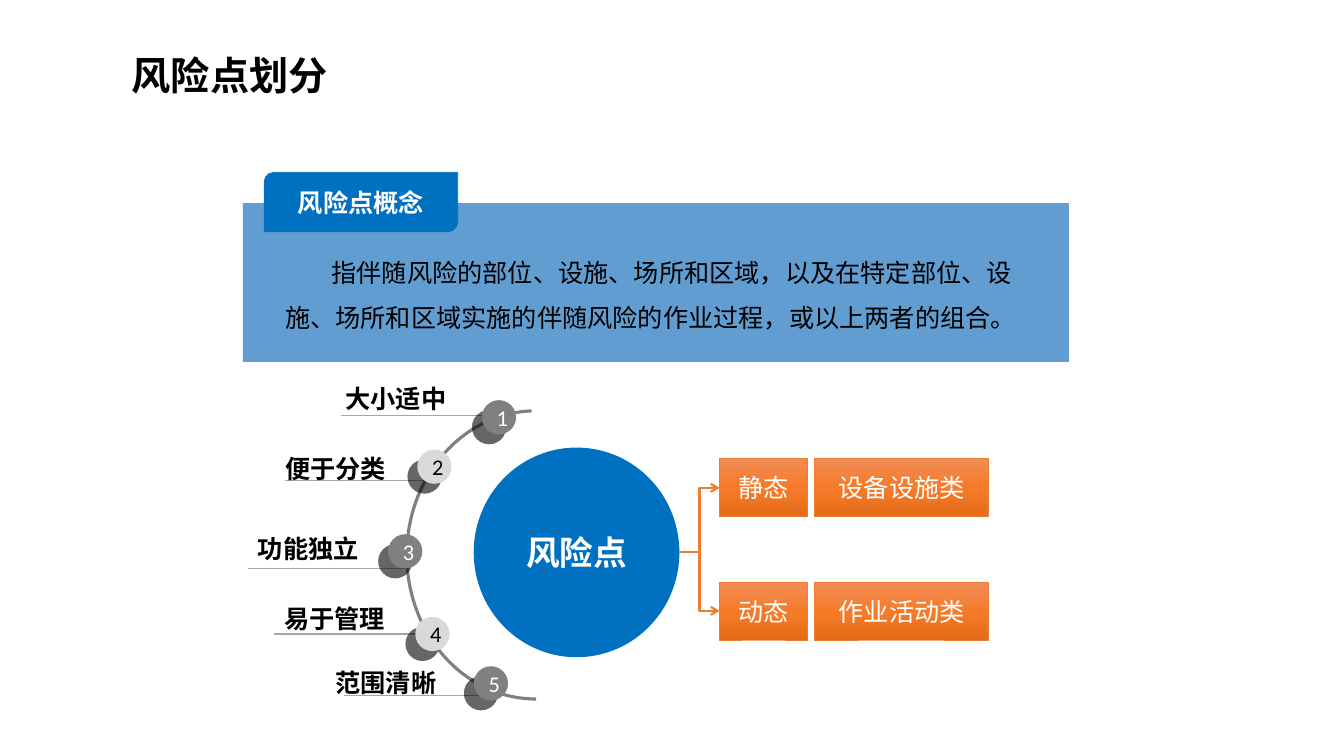
from copy import deepcopy
from dataclasses import dataclass
from typing import Optional

from lxml.etree import SubElement
from pptx import Presentation
from pptx.dml.color import RGBColor
from pptx.enum.shapes import MSO_CONNECTOR, MSO_SHAPE
from pptx.enum.text import MSO_ANCHOR, MSO_AUTO_SIZE, PP_ALIGN
from pptx.oxml.ns import qn
from pptx.util import Emu, Inches, Pt

CELL = Inches(0.1)
COLS, ROWS = 133.33, 75
CJK = "Noto Sans CJK SC"
COLOURS = {
    "black": "000000",
    "white": "FFFFFF",
    "blue": "0070C0",
    "sky": "629DD1",
    "grey": "808080",
    "light": "D9D9D9",
    "rule": "9DA8B1",
    "orange": "ED7D31",
}
ORANGE_STOPS = ((0, "F18C57"), (0.5, "F67B28"), (1, "E56C19"))


@dataclass(frozen=True)
class Box:
    col: float
    row: float
    cols: float
    rows: float

    def emu(self) -> tuple[Emu, ...]:
        return tuple(cells(n) for n in (self.col, self.row, self.cols, self.rows))


@dataclass(frozen=True)
class Text:
    words: str
    size: int
    colour: str
    bold: bool = False
    font: str = "Calibri"


@dataclass(frozen=True)
class Criterion:
    label: str
    label_at: tuple[float, float]
    rule_at: tuple[float, float]
    rule_cols: float
    dot_at: tuple[float, float]
    font: str = "Calibri"


@dataclass(frozen=True)
class Branch:
    state: str
    category: str
    row: float
    arrow_row: float


CRITERIA = (
    Criterion("大小适中", (33.3, 37.5), (33.8, 41.2), 15.7, (47.8, 39.7), "Arial"),
    Criterion("便于分类", (27.3, 44.5), (28.3, 47.7), 14.6, (41.4, 44.6)),
    Criterion("功能独立", (24.6, 52.4), (24.6, 56.4), 15.7, (38.5, 53)),
    Criterion("易于管理", (27.2, 59.4), (27.2, 62.9), 15.7, (41.2, 61.2)),
    Criterion("范围清晰", (32.3, 65.7), (34.1, 69), 15.7, (47, 66.1)),
)
BRANCHES = (
    Branch("静态", "设备设施类", 45.5, 48.4),
    Branch("动态", "作业活动类", 57.8, 60.6),
)


def cells(n: float) -> Emu:
    return Emu(round(n * CELL))


def rgb(name: str) -> RGBColor:
    return RGBColor.from_string(COLOURS[name])


def add_run(p, text: Text) -> None:
    r = p.add_run()
    r.text = text.words
    r.font.size = Pt(text.size)
    r.font.bold = text.bold
    r.font.name = text.font
    r.font.color.rgb = rgb(text.colour)
    SubElement(r.font._element, qn("a:ea"), typeface=CJK)


def add_shape(s, kind: MSO_SHAPE, box: Box, fill: str,
              line: Optional[str] = None, text: Optional[Text] = None):
    sp = s.shapes.add_shape(kind, *box.emu())
    sp.shadow.inherit = False
    sp.fill.solid()
    sp.fill.fore_color.rgb = rgb(fill)
    if line:
        sp.line.color.rgb = rgb(line)
        sp.line.width = Pt(0.5)
    else:
        sp.line.fill.background()
    if text:
        tf = sp.text_frame
        tf.vertical_anchor = MSO_ANCHOR.MIDDLE
        p = tf.paragraphs[0]
        p.alignment = PP_ALIGN.CENTER
        add_run(p, text)
    return sp


def add_text(s, box: Box, text: Text, wrap: bool = False):
    tf = s.shapes.add_textbox(*box.emu()).text_frame
    tf.word_wrap = wrap
    tf.auto_size = MSO_AUTO_SIZE.SHAPE_TO_FIT_TEXT
    p = tf.paragraphs[0]
    add_run(p, text)
    return p


def add_line(s, kind: MSO_CONNECTOR, start: tuple[float, float],
             end: tuple[float, float], colour: str, width: float):
    cx = s.shapes.add_connector(kind, *(cells(n) for n in start + end))
    cx.line.color.rgb = rgb(colour)
    cx.line.width = Pt(width)
    SubElement(cx._element.spPr, qn("a:effectLst"))
    return cx


def add_dot(s, at: tuple[float, float], number: int) -> None:
    fill, ink = ("grey", "white") if number % 2 else ("light", "black")
    sp = add_shape(s, MSO_SHAPE.OVAL, Box(*at, 3.4, 3.4), fill,
                   text=Text(str(number), 16, ink))
    effects = sp._element.spPr.find(qn("a:effectLst"))
    shadow = SubElement(effects, qn("a:outerShdw"), blurRad="0",
                        dist=str(Pt(10)), dir=str(135 * 60000), rotWithShape="0")
    colour = SubElement(shadow, qn("a:srgbClr"), val=COLOURS["black"])
    SubElement(colour, qn("a:alpha"), val="60000")


def add_tile(s, box: Box, words: str) -> None:
    sp = add_shape(s, MSO_SHAPE.RECTANGLE, box, "orange", "orange",
                   Text(words, 18, "white"))
    sp.fill.gradient()
    sp.fill.gradient_angle = 270
    stops = sp._element.spPr.find(".//" + qn("a:gsLst"))
    stops.append(deepcopy(stops[-1]))
    for stop, (position, colour) in zip(sp.fill.gradient_stops, ORANGE_STOPS):
        stop.position = position
        stop.color.rgb = RGBColor.from_string(colour)


def add_concept(s) -> None:
    add_shape(s, MSO_SHAPE.RECTANGLE, Box(24.1, 20.2, 81.9, 15.7), "sky", "sky")
    p = add_text(s, Box(27.3, 23.5, 75.6, 10.1), Text(
        "指伴随风险的部位、设施、场所和区域，以及在特定部位、设施、场所和区域"
        "实施的伴随风险的作业过程，或以上两者的组合。", 18, "black"), wrap=True)
    p.line_spacing = 1.5
    p._p.get_or_add_pPr().set("indent", str(cells(4.6)))
    add_shape(s, MSO_SHAPE.ROUND_2_DIAG_RECTANGLE, Box(26.2, 17.1, 19.2, 5.9),
              "blue", "blue", Text("风险点概念", 18, "white", True, CJK))


def add_criteria(s) -> None:
    for c in CRITERIA:
        col, row = c.rule_at
        add_line(s, MSO_CONNECTOR.STRAIGHT, c.rule_at,
                 (col + c.rule_cols, row), "rule", 1)
    arc = add_shape(s, MSO_SHAPE.BLOCK_ARC, Box(38.7, 42.1, 28.9, 25.9), "grey")
    arc.rotation = 270
    for i, value in enumerate((107.93, 215.03, 0.012)):
        arc.adjustments[i] = value
    add_shape(s, MSO_SHAPE.OVAL, Box(47, 44.4, 20.4, 20.8), "blue",
              text=Text("风险点", 24, "white", True))
    for number, c in enumerate(CRITERIA, 1):
        add_dot(s, c.dot_at, number)
        add_text(s, Box(*c.label_at, 12.1, 4),
                 Text(c.label, 18, "black", True, c.font))


def add_branches(s) -> None:
    for b in BRANCHES:
        add_tile(s, Box(71.4, b.row, 8.7, 5.7), b.state)
        add_tile(s, Box(80.8, b.row, 17.3, 5.7), b.category)
        cx = add_line(s, MSO_CONNECTOR.ELBOW, (67.4, 54.8),
                      (71.4, b.arrow_row), "orange", 1.5)
        SubElement(cx.line._get_or_add_ln(), qn("a:tailEnd"), type="arrow")


def main() -> None:
    prs = Presentation()
    prs.slide_width, prs.slide_height = cells(COLS), cells(ROWS)
    s = prs.slides.add_slide(prs.slide_layouts[6])
    add_text(s, Box(12.1, 4.6, 21.7, 5.7),
             Text("风险点划分", 28, "black", True, "Arial"))
    add_concept(s)
    add_criteria(s)
    add_branches(s)
    prs.save("out.pptx")


if __name__ == "__main__":
    main()
